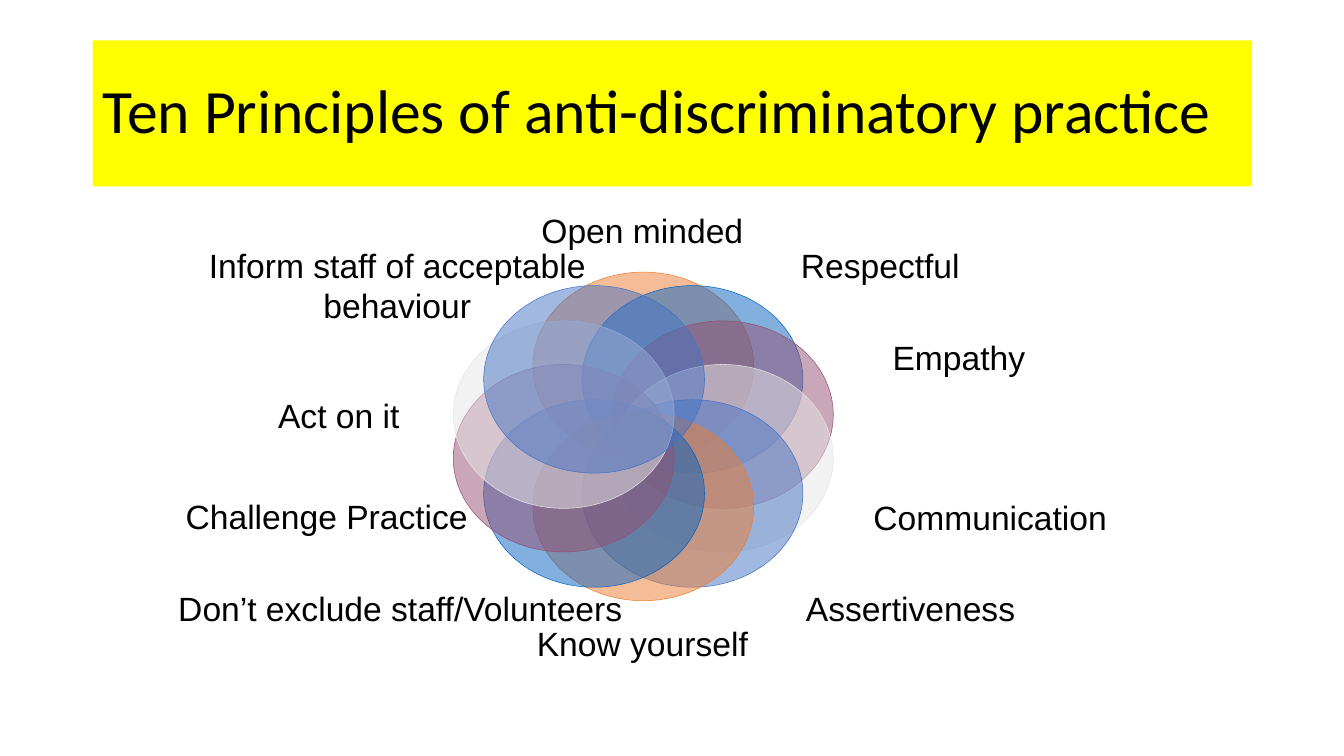
from math import cos, pi, sin

from lxml import etree
from pptx import Presentation
from pptx.dml.color import RGBColor
from pptx.enum.shapes import MSO_SHAPE
from pptx.enum.text import MSO_ANCHOR, PP_ALIGN
from pptx.oxml.ns import qn
from pptx.util import Inches, Pt

RECT, OVAL = MSO_SHAPE.RECTANGLE, MSO_SHAPE.OVAL
MIDDLE = MSO_ANCHOR.MIDDLE
LEFT, CENTER = PP_ALIGN.LEFT, PP_ALIGN.CENTER

THEME = {
    "title_fill": "FFFF00",
    "text": "000000",
    "petals": ["ED7D31", "0563C1", "954F72", "E7E6E6", "4472C4"],
    "alpha": "50000",
    "title": ("Calibri", Pt(44)),
    "label": ("Arial", Pt(24)),
    "outline": Pt(0.37),
}

prs = Presentation()
prs.slide_width, prs.slide_height = Inches(13.33), Inches(7.5)
s = prs.slides.add_slide(prs.slide_layouts[6])


def add_filled(kind, x, y, w, h, color):
    sp = s.shapes.add_shape(kind, Inches(x), Inches(y), Inches(w), Inches(h))
    sp.shadow.inherit = False
    sp.fill.solid()
    sp.fill.fore_color.rgb = RGBColor.from_string(color)
    return sp


def write(tf, lines, style, align):
    tf.vertical_anchor = MIDDLE
    for i, line in enumerate(lines):
        p = tf.paragraphs[0] if i == 0 else tf.add_paragraph()
        p.text = line
        p.alignment = align
        p.font.name, p.font.size = THEME[style]
        p.font.color.rgb = RGBColor.from_string(THEME["text"])


# Title band
band = add_filled(RECT, 0.92, 0.4, 11.5, 1.45, THEME["title_fill"])
band.line.fill.background()
write(band.text_frame, ["Ten Principles of anti-discriminatory practice"], "title", LEFT)
band.text_frame.paragraphs[0].line_spacing = 0.9

# Principles clockwise from the top: lines of text, label centre x and y, label width
principles = [
    (["Open minded"], 6.37, 2.28, 2.19),
    (["Respectful"], 8.73, 2.63, 2.19),
    (["Empathy"], 9.51, 3.54, 2.19),
    (["Communication"], 9.82, 5.13, 2.6),
    (["Assertiveness"], 9.03, 6.03, 2.78),
    (["Know yourself"], 6.37, 6.38, 2.19),
    (["Don’t exclude staff/Volunteers"], 3.97, 6.03, 4.6),
    (["Challenge Practice"], 3.24, 5.12, 3),
    (["Inform staff of acceptable", "behaviour"], 3.94, 2.83, 4),
    (["Act on it"], 3.36, 4.12, 2.19),
]
RING_X, RING_Y = 6.38, 4.33
RADIUS_X, RADIUS_Y = 0.83, 0.7
PETAL_W, PETAL_H = 2.19, 1.86
LABEL_H = 0.46

for i, (lines, label_x, label_y, label_w) in enumerate(principles):
    # Translucent petal on the ring
    angle = 2 * pi * i / len(principles)
    x = RING_X + RADIUS_X * sin(angle) - PETAL_W / 2
    y = RING_Y - RADIUS_Y * cos(angle) - PETAL_H / 2
    color = THEME["petals"][i % len(THEME["petals"])]
    petal = add_filled(OVAL, x, y, PETAL_W, PETAL_H, color)
    petal.line.color.rgb = RGBColor.from_string(color)
    petal.line.width = THEME["outline"]
    fill_color = petal.element.spPr.find(qn("a:solidFill"))[0]
    etree.SubElement(fill_color, qn("a:alpha"), val=THEME["alpha"])

    # Label centred on its point
    box = s.shapes.add_textbox(Inches(label_x - label_w / 2), Inches(label_y - LABEL_H / 2),
                               Inches(label_w), Inches(LABEL_H))
    tf = box.text_frame
    tf.word_wrap = False
    tf.margin_left = tf.margin_right = tf.margin_top = tf.margin_bottom = 0
    write(tf, lines, "label", CENTER)

prs.save("out.pptx")
